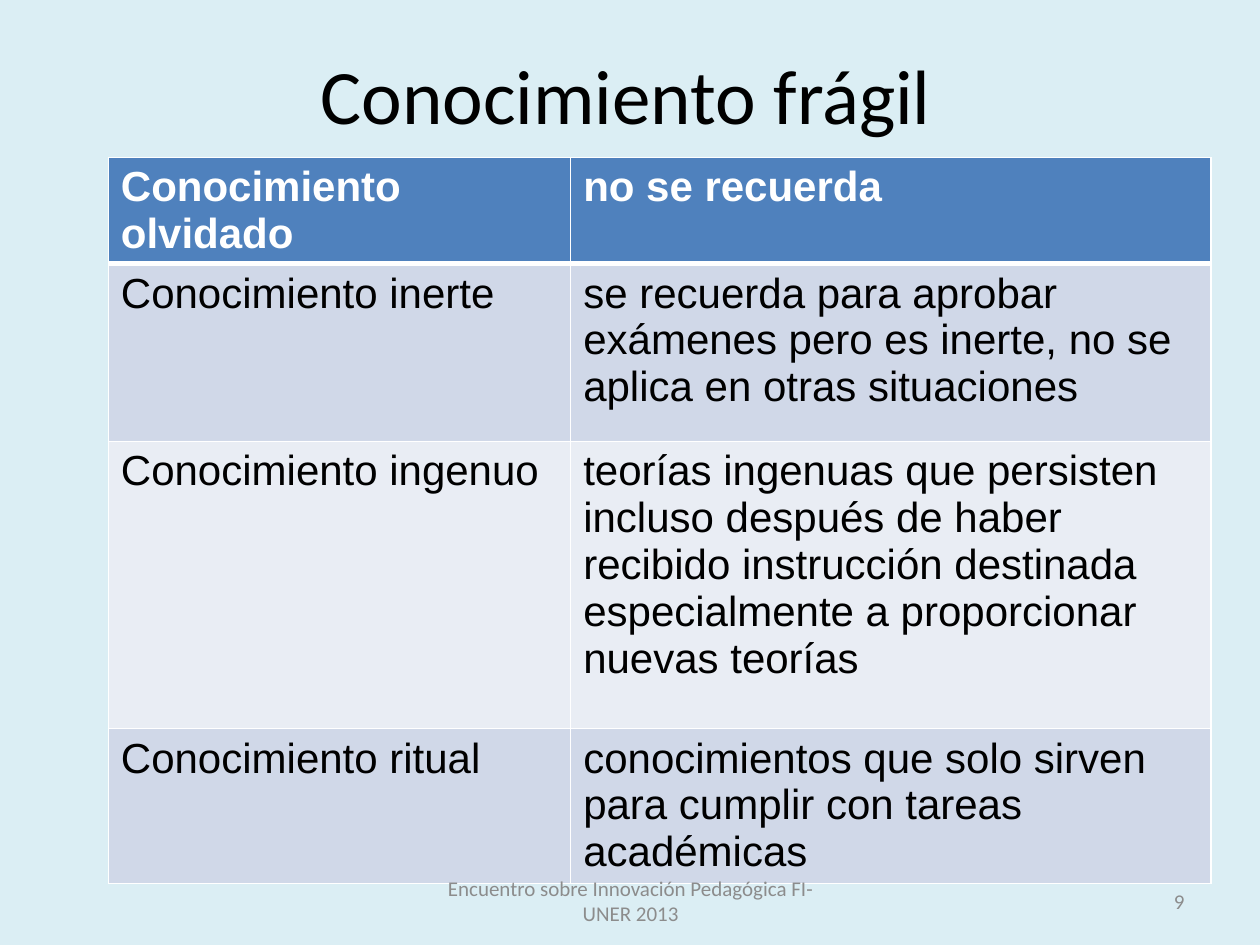
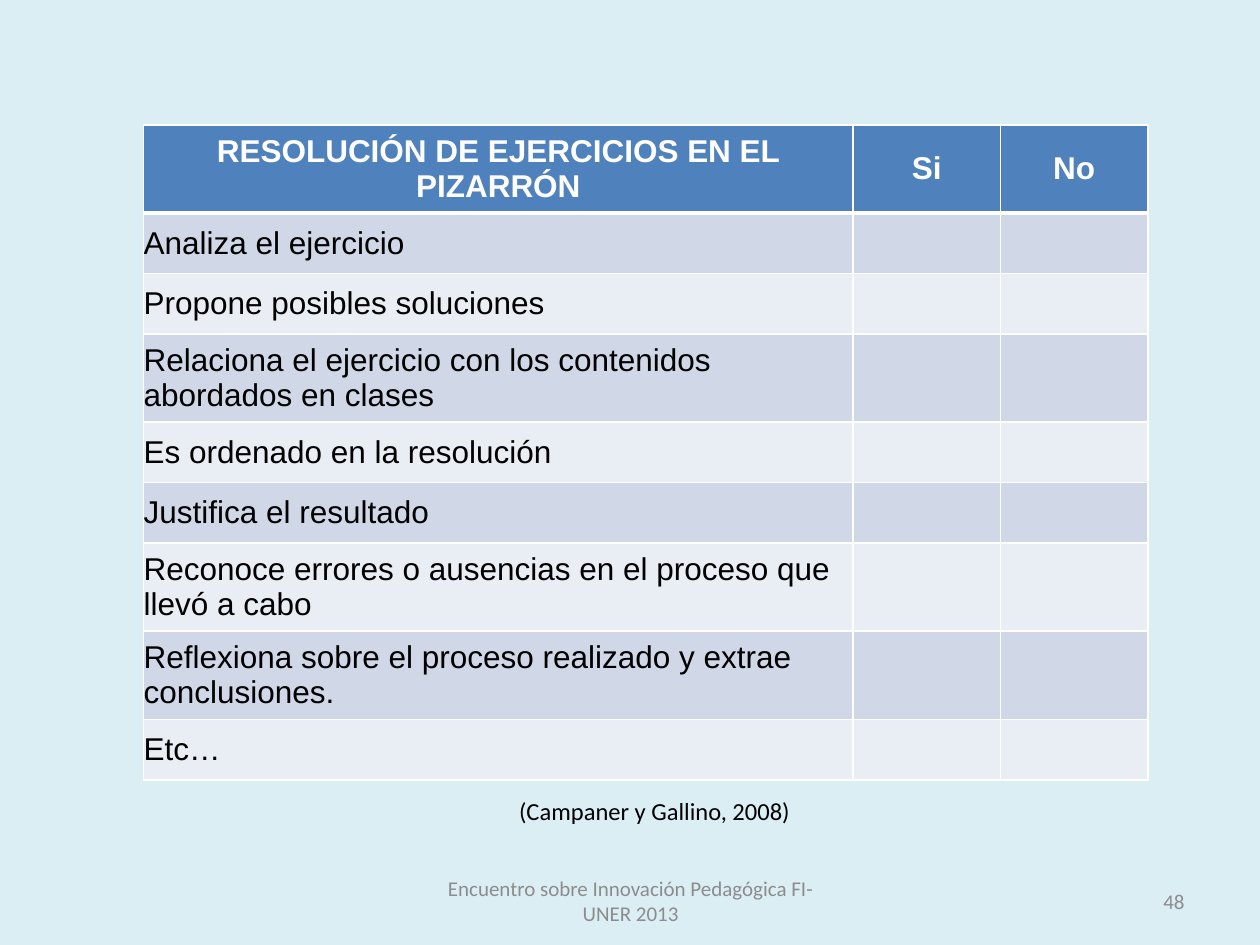
from lxml.etree import SubElement
from pptx import Presentation
from pptx.dml.color import RGBColor
from pptx.enum.text import MSO_ANCHOR, PP_ALIGN
from pptx.oxml.ns import qn
from pptx.util import Inches, Pt

COLOURS = {
    "background": "DBEEF4",
    "header": "4F81BD",
    "odd_row": "D0D8E8",
    "even_row": "E9EDF4",
    "white": "FFFFFF",
    "text": "000000",
    "footer": "8C8C8C",
}
FOOTER = "Encuentro sobre Innovación Pedagógica FI-UNER 2013"

KNOWLEDGE_ROWS = [
    ("Conocimiento olvidado", "no se recuerda"),
    ("Conocimiento inerte",
     "se recuerda para aprobar exámenes pero es inerte, no se aplica en otras situaciones"),
    ("Conocimiento ingenuo",
     "teorías ingenuas que persisten incluso después de haber recibido instrucción "
     "destinada especialmente a proporcionar nuevas teorías"),
    ("Conocimiento ritual", "conocimientos que solo sirven para cumplir con tareas académicas"),
]
CRITERIA = [
    "Analiza el ejercicio",
    "Propone posibles soluciones",
    "Relaciona el ejercicio con los contenidos abordados en clases",
    "Es ordenado en la resolución",
    "Justifica el resultado",
    "Reconoce errores o ausencias en el proceso que llevó a cabo",
    "Reflexiona sobre el proceso realizado y extrae conclusiones.",
    "Etc…",
]
CHECKLIST_ROWS = [("RESOLUCIÓN DE EJERCICIOS EN EL PIZARRÓN", "Si", "No")]
CHECKLIST_ROWS += [(criterion, "", "") for criterion in CRITERIA]


def colour(name):
    return RGBColor.from_string(COLOURS[name])


class DeckBuilder:
    def __init__(self):
        self.deck = Presentation()
        self.deck.slide_width = Inches(10)
        self.deck.slide_height = Inches(7.5)
        fill = self.deck.slide_master.background.fill
        fill.solid()
        fill.fore_color.rgb = colour("background")

    def add_page(self, title=None):
        layout = "Title Only" if title else "Blank"
        self.page = self.deck.slides.add_slide(self.deck.slide_layouts.get_by_name(layout))
        if title:
            box = self.page.shapes.title
            box.left, box.top, box.width, box.height = map(Inches, (0.47, 0.31, 9, 0.86))
            box.text_frame.vertical_anchor = MSO_ANCHOR.MIDDLE
            self.set_text(box.text_frame, title, 44, align=PP_ALIGN.CENTER)

    def set_text(self, frame, text, size, ink="text", align=PP_ALIGN.LEFT, font="Calibri", bold=False):
        para = frame.paragraphs[0]
        para.text = text
        para.alignment = align
        para.font.name = font
        para.font.size = Pt(size)
        para.font.bold = bold
        para.font.color.rgb = colour(ink)

    def add_text(self, text, place, size, ink="text", align=PP_ALIGN.CENTER, anchor=MSO_ANCHOR.TOP):
        box = self.page.shapes.add_textbox(*map(Inches, place))
        frame = box.text_frame
        frame.word_wrap = True
        frame.vertical_anchor = anchor
        self.set_text(frame, text, size, ink, align)

    def add_footer(self, number):
        for text, left, width, align in (
            (FOOTER, 3.42, 3.17, PP_ALIGN.CENTER),
            (str(number), 7.17, 2.33, PP_ALIGN.RIGHT),
        ):
            self.add_text(text, (left, 6.95, width, 0.4), 12, "footer", align, MSO_ANCHOR.MIDDLE)

    def add_borders(self, cell, row):
        properties = cell._tc.get_or_add_tcPr()
        widths = {"L": 1, "R": 1, "T": 3 if row == 1 else 1, "B": 3 if row == 0 else 1}
        for side, width in widths.items():
            line = SubElement(properties, qn(f"a:ln{side}"), w=str(Pt(width)))
            SubElement(SubElement(line, qn("a:solidFill")), qn("a:srgbClr"), val=COLOURS["white"])

    def add_table(self, rows, left, top, widths, heights, size, compact=False):
        table = self.page.shapes.add_table(
            len(rows), len(widths), Inches(left), Inches(top),
            Inches(sum(widths)), Inches(sum(heights))).table
        for column, width in zip(table.columns, widths):
            column.width = Inches(width)
        for row, (texts, height) in enumerate(zip(rows, heights)):
            table.rows[row].height = Inches(height)
            header = row == 0
            shade = "header" if header else "odd_row" if row % 2 else "even_row"
            for column, text in enumerate(texts):
                cell = table.cell(row, column)
                if compact:
                    cell.margin_left = cell.margin_right = 0
                    cell.margin_top = cell.margin_bottom = 0
                    cell.vertical_anchor = MSO_ANCHOR.MIDDLE
                self.add_borders(cell, row)
                cell.fill.solid()
                cell.fill.fore_color.rgb = colour(shade)
                align = PP_ALIGN.CENTER if header and compact else PP_ALIGN.LEFT
                self.set_text(cell.text_frame, text, size, "white" if header else "text",
                              align, "Arial", header)


def main():
    builder = DeckBuilder()

    builder.add_page("Conocimiento frágil")
    builder.add_table(KNOWLEDGE_ROWS, 0.86, 1.25, (3.67, 5.08), (0.63, 1.41, 2.28, 1.23), 24)
    builder.add_footer(9)

    builder.add_page()
    heights = [0.7] + [0.7 if len(criterion) > 40 else 0.48 for criterion in CRITERIA]
    builder.add_table(CHECKLIST_ROWS, 1.14, 0.99, (5.63, 1.17, 1.17), heights, 18, compact=True)
    builder.add_footer(48)
    builder.add_text("(Campaner y Gallino, 2008)", (2.87, 6.27, 4.65, 0.33), 14)

    builder.deck.save("out.pptx")


if __name__ == "__main__":
    main()
